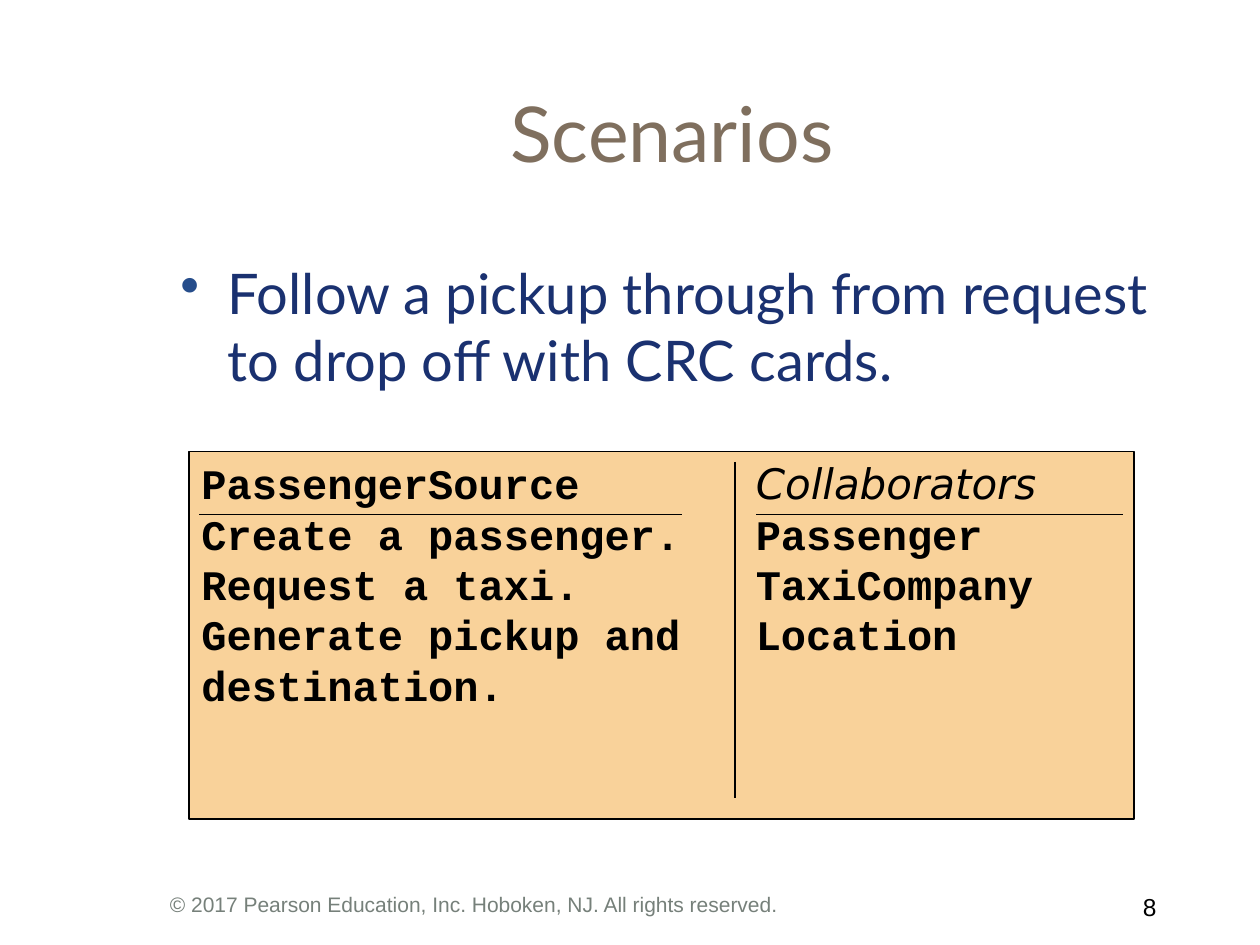
from lxml.etree import SubElement
from pptx import Presentation
from pptx.dml.color import RGBColor
from pptx.enum.shapes import MSO_CONNECTOR, MSO_SHAPE
from pptx.enum.text import MSO_ANCHOR, PP_ALIGN
from pptx.oxml.ns import qn
from pptx.util import Pt

TITLE = "Scenarios"
POINT = "Follow a pickup through from request to drop off with CRC cards."
RIGHTS = "© 2017 Pearson Education, Inc. Hoboken, NJ. All rights reserved."
NUMBER = "8"
HEAD = ("PassengerSource", "Collaborators")
ROWS = [
    ("Create a passenger.", "Passenger"),
    ("Request a taxi.", "TaxiCompany"),
    ("Generate pickup and", "Location"),
    ("destination.", ""),
]
CARD = (108, 258, 540, 210)
RULES = [(114, 294, 390, 294), (420, 264, 420, 456), (432, 294, 642, 294)]
TAB = 316.8
INK = "000000"


def color(code):
    return RGBColor.from_string(code)


def style(font, name, size, code, bold=None, slant=None):
    font.name, font.size = name, Pt(size)
    font.bold, font.italic = bold, slant
    font.color.rgb = color(code)


def label(slide, text, box, name, size, code, align=PP_ALIGN.LEFT):
    frame = slide.shapes.add_textbox(*map(Pt, box)).text_frame
    frame.word_wrap = True
    para = frame.paragraphs[0]
    para.text, para.alignment = text, align
    style(para.font, name, size, code)
    return frame


def bullet(slide):
    frame = label(slide, "", (96, 144, 588, 336), "Lato", 32, "1A3170")
    para = frame.paragraphs[0]
    para.text = POINT
    props = para._p.get_or_add_pPr()
    props.set("marL", str(Pt(27)))
    props.set("indent", str(Pt(-27)))
    tint = props.makeelement(qn("a:buClr"), {})
    SubElement(tint, qn("a:srgbClr"), val="264D8B")
    mark = props.makeelement(qn("a:buChar"), {"char": "•"})
    props.insert(0, tint)
    props.insert(1, mark)


def card(slide):
    shape = slide.shapes.add_shape(MSO_SHAPE.RECTANGLE, *map(Pt, CARD))
    shape.shadow.inherit = False
    shape.fill.solid()
    shape.fill.fore_color.rgb = color("F9D29A")
    shape.line.color.rgb = color(INK)
    shape.line.width = Pt(0.75)
    frame = shape.text_frame
    frame.word_wrap = True
    frame.vertical_anchor = MSO_ANCHOR.TOP
    for i, (duty, mate) in enumerate([HEAD] + ROWS):
        para = frame.paragraphs[0] if i == 0 else frame.add_paragraph()
        para.alignment = PP_ALIGN.LEFT
        stops = SubElement(para._p.get_or_add_pPr(), qn("a:tabLst"))
        SubElement(stops, qn("a:tab"), pos=str(Pt(TAB)), algn="l")
        style(para.font, "Courier New", 24, INK, bold=True)
        for text, first in ((duty, True), ("\t" + mate, False)):
            if not text.strip():
                continue
            run = para.add_run()
            run.text = text
            if i == 0 and not first:
                style(run.font, "DejaVu Sans", 24, INK, False, True)
            else:
                style(run.font, "Courier New", 24, INK, True)


def rule(slide, ends):
    line = slide.shapes.add_connector(MSO_CONNECTOR.STRAIGHT, *map(Pt, ends))
    line.line.color.rgb = color(INK)
    line.line.width = Pt(0.75)
    SubElement(line._element.spPr, qn("a:effectLst"))


def main():
    deck = Presentation()
    deck.slide_width, deck.slide_height = Pt(720), Pt(540)
    slide = deck.slides.add_slide(deck.slide_layouts[6])
    label(slide, NUMBER, (626, 506, 42, 24), "Arial", 14, INK, PP_ALIGN.RIGHT)
    title = label(slide, TITLE, (78, 30, 612, 90), "Lato", 44, "7F6F5E", PP_ALIGN.CENTER)
    title.vertical_anchor = MSO_ANCHOR.MIDDLE
    bullet(slide)
    label(slide, RIGHTS, (90, 506, 546, 24), "Arial", 12, "76807A")
    card(slide)
    for ends in RULES:
        rule(slide, ends)
    deck.save("out.pptx")


if __name__ == "__main__":
    main()
